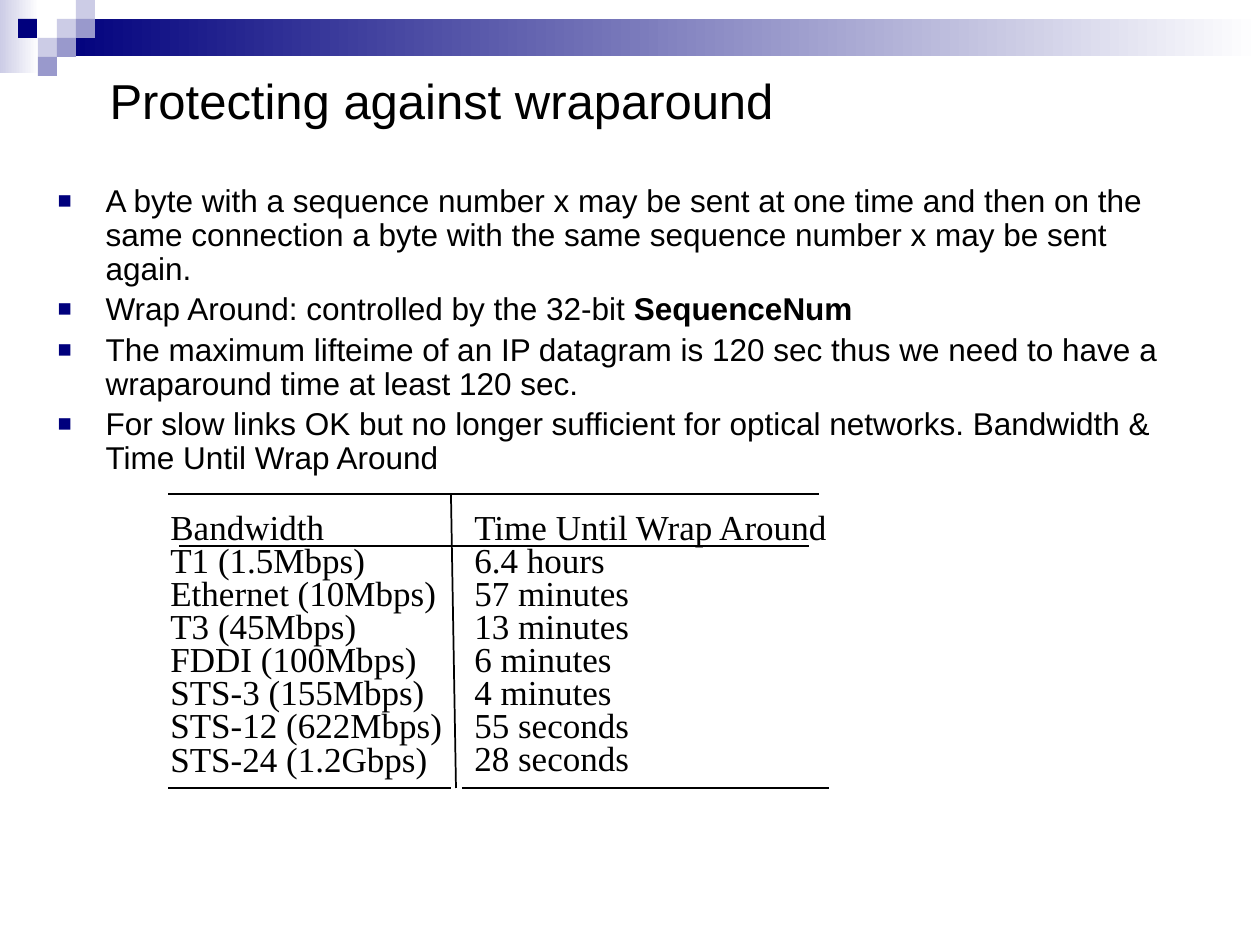
from dataclasses import dataclass
from typing import Any

from lxml.etree import SubElement
from pptx import Presentation
from pptx.dml.color import RGBColor
from pptx.enum.shapes import MSO_CONNECTOR, MSO_SHAPE
from pptx.enum.text import MSO_ANCHOR, MSO_AUTO_SIZE, PP_ALIGN
from pptx.oxml.ns import qn
from pptx.util import Emu, Pt

EMU_PER_PIXEL = 914400 / 126
COLORS = {
    "navy": "00007D",
    "violet": "9999CC",
    "lavender": "CCCCE6",
    "white": "FFFFFF",
    "black": "000000",
}
TITLE_FONT = {"name": "Arial", "size": Pt(28), "bold": False}
BODY_FONT = {"name": "Arial", "size": Pt(18), "bold": False}
COLUMN_FONT = {"name": "Times New Roman", "size": Pt(20), "bold": False}
BODY_PARAGRAPH = {"line_spacing": 0.9, "space_before": Pt(3.6), "alignment": PP_ALIGN.LEFT}
HEADER_PARAGRAPH = {"line_spacing": 0.6, "space_before": Pt(10)}
ROW_PARAGRAPH = {"line_spacing": 0.6, "space_before": Pt(4.5)}
FRAME = {"word_wrap": True, "auto_size": MSO_AUTO_SIZE.NONE, "vertical_anchor": MSO_ANCHOR.TOP}


@dataclass(frozen=True)
class Box:
    left: int
    top: int
    width: int
    height: int


@dataclass(frozen=True)
class Block:
    box: Box
    colors: tuple[str, ...]


@dataclass(frozen=True)
class Rule:
    start: tuple[int, int]
    end: tuple[int, int]


@dataclass(frozen=True)
class Column:
    box: Box
    header: str
    rows: tuple[str, ...]


def square(left: int, top: int, color: str) -> Block:
    return Block(Box(left, top, 19, 19), (color,))


BLOCKS = (
    Block(Box(0, 0, 39, 73), ("lavender", "white")),
    Block(Box(57, 19, 1203, 37), ("navy", "white")),
    square(57, 19, "lavender"),
    square(76, 0, "lavender"),
    square(76, 19, "violet"),
    square(38, 38, "lavender"),
    square(18, 19, "navy"),
    square(57, 38, "violet"),
    square(38, 57, "violet"),
)
BULLETS = (
    (("A byte with a sequence number x may be sent at one time and then on the same "
      "connection a byte with the same sequence number x may be sent again.", False),),
    (("Wrap Around: controlled by the 32-bit ", False), ("SequenceNum", True)),
    (("The maximum lifteime of an IP datagram is 120 sec thus we need to have a "
      "wraparound time at least 120 sec.", False),),
    (("For slow links OK but no longer sufficient for optical networks. "
      "Bandwidth & Time Until Wrap Around", False),),
)
COLUMNS = (
    Column(Box(158, 514, 325, 372), "Bandwidth", (
        "T1 (1.5Mbps)", "Ethernet (10Mbps)", "T3 (45Mbps)", "FDDI (100Mbps)",
        "STS-3 (155Mbps)", "STS-12 (622Mbps)", "STS-24 (1.2Gbps)")),
    Column(Box(462, 514, 388, 318), "Time Until Wrap Around", (
        "6.4 hours", "57 minutes", "13 minutes", "6 minutes",
        "4 minutes", "55 seconds", "28 seconds")),
)
RULES = (
    Rule((456, 788), (451, 495)),
    Rule((451, 494), (168, 494)),
    Rule((451, 494), (819, 494)),
    Rule((441, 546), (809, 546)),
    Rule((462, 546), (179, 546)),
    Rule((462, 788), (829, 788)),
    Rule((451, 788), (168, 788)),
)


def pixels(value: int) -> Emu:
    return Emu(round(value * EMU_PER_PIXEL))


def color(name: str) -> RGBColor:
    return RGBColor.from_string(COLORS[name])


def apply_format(target: Any, values: dict[str, Any]) -> None:
    for name, value in values.items():
        setattr(target, name, value)


def place(shape: Any, box: Box) -> None:
    for name in ("left", "top", "width", "height"):
        setattr(shape, name, pixels(getattr(box, name)))


def add_run(paragraph: Any, text: str, font: dict[str, Any]) -> None:
    run = paragraph.add_run()
    run.text = text
    apply_format(run.font, font)
    run.font.color.rgb = color("black")


def add_block(slide: Any, block: Block) -> None:
    shape = slide.shapes.add_shape(MSO_SHAPE.RECTANGLE, 0, 0, 0, 0)
    place(shape, block.box)
    shape.shadow.inherit = False
    shape.line.fill.background()
    if len(block.colors) == 1:
        shape.fill.solid()
        shape.fill.fore_color.rgb = color(block.colors[0])
        return
    shape.fill.gradient()
    shape.fill.gradient_angle = 0
    for stop, name in zip(shape.fill.gradient_stops, block.colors):
        stop.color.rgb = color(name)


def add_bullet(paragraph: Any) -> None:
    properties = paragraph._p.get_or_add_pPr()
    indent = pixels(48)
    properties.set("marL", str(indent))
    properties.set("indent", str(-indent))
    bullet_color = SubElement(properties, qn("a:buClr"))
    SubElement(bullet_color, qn("a:srgbClr"), val=COLORS["navy"])
    SubElement(properties, qn("a:buSzPct"), val="75000")
    SubElement(properties, qn("a:buFont"), typeface="Arial")
    SubElement(properties, qn("a:buChar"), char="■")


def fill_title(title: Any) -> None:
    place(title, Box(97, 68, 1143, 63))
    apply_format(title.text_frame, {**FRAME, "vertical_anchor": MSO_ANCHOR.MIDDLE})
    paragraph = title.text_frame.paragraphs[0]
    paragraph.alignment = PP_ALIGN.LEFT
    add_run(paragraph, "Protecting against wraparound", TITLE_FONT)


def fill_body(body: Any) -> None:
    place(body, Box(45, 179, 1147, 287))
    frame = body.text_frame
    apply_format(frame, FRAME)
    for index, runs in enumerate(BULLETS):
        paragraph = frame.add_paragraph() if index else frame.paragraphs[0]
        apply_format(paragraph, BODY_PARAGRAPH)
        add_bullet(paragraph)
        for text, bold in runs:
            add_run(paragraph, text, {**BODY_FONT, "bold": bold})


def add_column(slide: Any, column: Column) -> None:
    shape = slide.shapes.add_textbox(0, 0, 0, 0)
    place(shape, column.box)
    frame = shape.text_frame
    apply_format(frame, FRAME)
    apply_format(frame.paragraphs[0], HEADER_PARAGRAPH)
    add_run(frame.paragraphs[0], column.header, COLUMN_FONT)
    for row in column.rows:
        paragraph = frame.add_paragraph()
        apply_format(paragraph, ROW_PARAGRAPH)
        add_run(paragraph, row, COLUMN_FONT)


def add_rule(slide: Any, rule: Rule) -> None:
    ends = [pixels(value) for value in rule.start + rule.end]
    connector = slide.shapes.add_connector(MSO_CONNECTOR.STRAIGHT, *ends)
    connector.line.width = Pt(1)
    connector.line.color.rgb = color("black")
    SubElement(connector._element.spPr, qn("a:effectLst"))


def main() -> None:
    presentation = Presentation()
    apply_format(presentation, {"slide_width": pixels(1260), "slide_height": pixels(945)})
    slide = presentation.slides.add_slide(presentation.slide_layouts[1])
    for block in BLOCKS:
        add_block(slide, block)
    fill_title(slide.shapes.title)
    fill_body(slide.placeholders[1])
    for column in COLUMNS:
        add_column(slide, column)
    for rule in RULES:
        add_rule(slide, rule)
    presentation.save("out.pptx")


if __name__ == "__main__":
    main()
